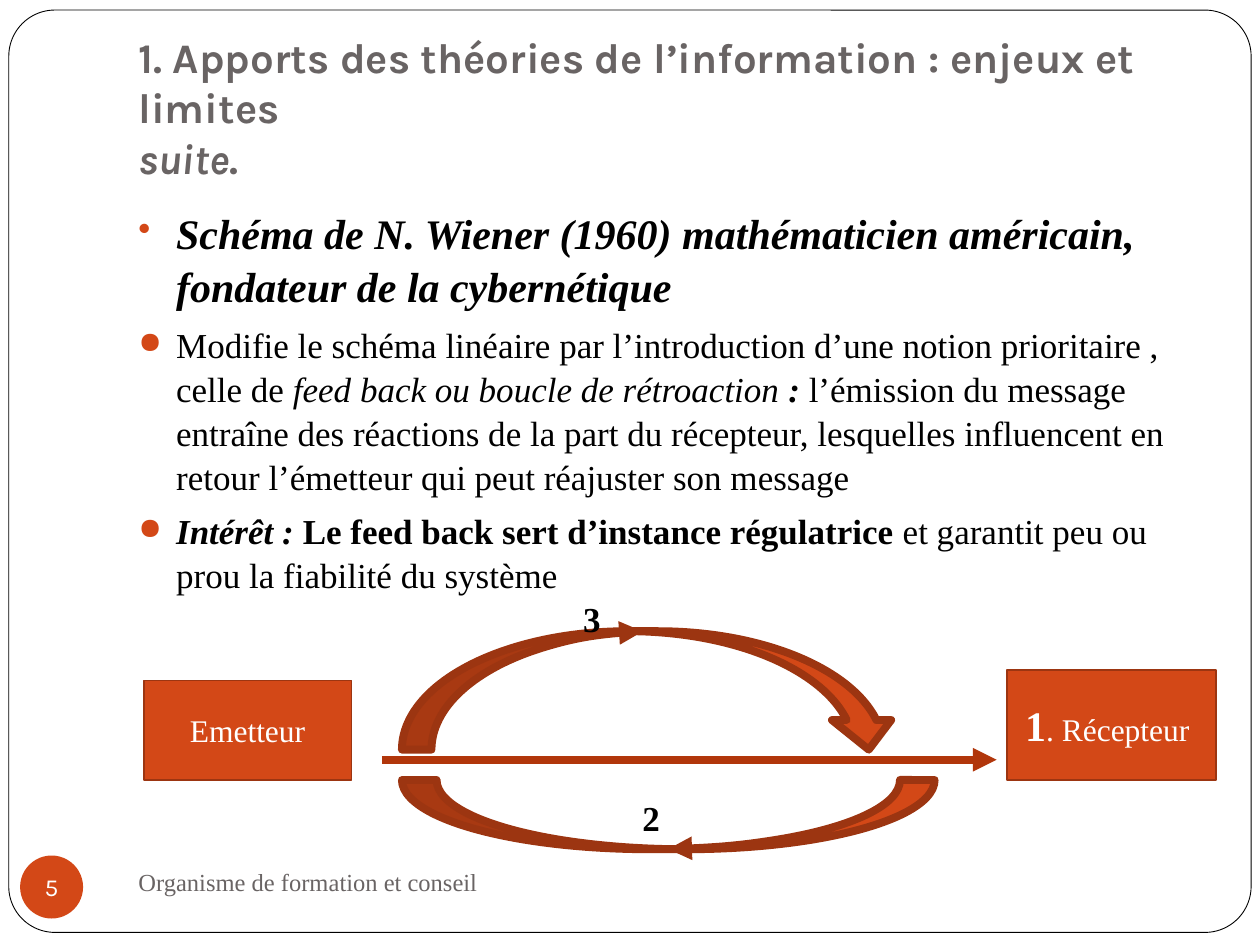
from lxml import etree
from pptx import Presentation
from pptx.dml.color import RGBColor
from pptx.enum.shapes import MSO_CONNECTOR, MSO_SHAPE
from pptx.enum.text import MSO_ANCHOR, PP_ALIGN
from pptx.oxml.ns import qn
from pptx.util import Inches, Pt

TOP, MIDDLE, BOTTOM = MSO_ANCHOR.TOP, MSO_ANCHOR.MIDDLE, MSO_ANCHOR.BOTTOM
LEFT, CENTER = PP_ALIGN.LEFT, PP_ALIGN.CENTER
SERIF, SANS = "Times New Roman", "Karla"
ORANGE, RUST, ARROW, GREY = "D34817", "9C3511", "B1360B", "696464"
BLACK, WHITE = "000000", "FFFFFF"
BOLD, ITALIC = {"bold": True}, {"italic": True}
BOLD_ITALIC = {**BOLD, **ITALIC}

# Content: each paragraph is a list of (text, format) runs
TITLE = [[("1. Apports des théories de l’information : enjeux et limites\v", BOLD),
          ("suite", BOLD_ITALIC), (".", BOLD)]]
BULLETS = ["•", "●", "●"]
BODY = [
    [("Schéma de N. Wiener (1960) mathématicien américain, fondateur de la cybernétique",
      {**BOLD_ITALIC, "size": Pt(24)})],
    [("Modifie le schéma linéaire par l’introduction d’une notion prioritaire , celle de ", {}),
     ("feed back ou boucle de rétroaction ", ITALIC),
     (": ", BOLD_ITALIC),
     ("l’émission du message entraîne des réactions de la part du récepteur, lesquelles "
      "influencent en retour l’émetteur qui peut réajuster son message", {})],
    [("Intérêt : ", BOLD_ITALIC),
     ("Le feed back sert d’instance régulatrice ", BOLD),
     ("et garantit peu ou prou la fiabilité du système", {})],
]
ACTORS = [
    ((1.14, 5.4, 1.65, 0.79), [[("Emetteur", {})]]),
    ((7.99, 5.32, 1.66, 0.87), [[("1", {**BOLD, "size": Pt(24)}), (". Récepteur ", {})]]),
]
LOOPS = [
    (MSO_SHAPE.CURVED_UP_ARROW, (3.19, 6.19, 4.09, 0.55), (0.5, 0, 0)),
    (MSO_SHAPE.CURVED_DOWN_ARROW, (3.19, 5.01, 3.94, 0.94), ()),
]
STEPS = [("2", (5, 6.27, 1.16, 0.44)), ("3", (4.53, 4.69, 1.18, 0.44))]
FOOTER = [[("Organisme de formation et conseil", {})]]


def rgb(value):
    return RGBColor.from_string(value)


def write(shape, paragraphs, size, color, font=SERIF, align=LEFT, anchor=TOP,
          margins=(0.1, 0.05, 0.1, 0.05), wrap=True):
    frame = shape.text_frame
    frame.word_wrap, frame.vertical_anchor = wrap, anchor
    for side, margin in zip(("left", "top", "right", "bottom"), margins):
        setattr(frame, f"margin_{side}", Inches(margin))
    for index, runs in enumerate(paragraphs):
        paragraph = frame.add_paragraph() if index else frame.paragraphs[0]
        paragraph.alignment = align
        for text, changes in runs:
            # A vertical tab stands for a line break after the run
            run = paragraph.add_run()
            run.text = text.rstrip("\v")
            formats = {"name": font, "size": Pt(size), "bold": False, "italic": False, **changes}
            for name, value in formats.items():
                setattr(run.font, name, value)
            run.font.color.rgb = rgb(color)
            if text.endswith("\v"):
                paragraph.add_line_break()
    return frame


def add_text(box, paragraphs, size, color, **options):
    shape = slide.shapes.add_textbox(*map(Inches, box))
    return write(shape, paragraphs, size, color, **options)


def add_figure(kind, box, fill, line=None, width=1):
    shape = slide.shapes.add_shape(kind, *map(Inches, box))
    shape.shadow.inherit = False
    shape.fill.solid()
    shape.fill.fore_color.rgb = rgb(fill)
    if line:
        shape.line.color.rgb = rgb(line)
        shape.line.width = Pt(width)
    else:
        shape.line.fill.background()
    return shape


def add_arrowhead(shape, end):
    line = shape.line._get_or_add_ln()
    etree.SubElement(line, qn("a:round"))
    etree.SubElement(line, qn(f"a:{end}"), type="triangle")


def add_bullet(paragraph, character):
    properties = paragraph._p.get_or_add_pPr()
    properties.set("marL", str(Inches(0.3)))
    properties.set("indent", str(-Inches(0.3)))
    color = etree.SubElement(properties, qn("a:buClr"))
    etree.SubElement(color, qn("a:srgbClr"), val=ORANGE)
    etree.SubElement(properties, qn("a:buSzPct"), val="85000")
    etree.SubElement(properties, qn("a:buChar"), char=character)


presentation = Presentation()
presentation.slide_width, presentation.slide_height = Inches(10), Inches(7.5)
slide = presentation.slides.add_slide(presentation.slide_layouts[6])

# Rounded page frame
page = add_figure(MSO_SHAPE.ROUNDED_RECTANGLE, (0.07, 0.08, 9.86, 7.32), WHITE, BLACK, 0.5)
page.adjustments[0] = 0.05

# Title and bulleted body
add_text((1, 0.3, 8.5, 1.25), TITLE, 24, GREY, font=SANS, anchor=BOTTOM,
         margins=(0.1, 0.05, 0.1, 0.1))
body = add_text((1, 1.58, 8.5, 5), BODY, 20, BLACK)
for paragraph, character in zip(body.paragraphs, BULLETS):
    paragraph.line_spacing = 1.05
    paragraph.space_before = Pt(5.8)
    add_bullet(paragraph, character)

# Sender and receiver
for box, label in ACTORS:
    actor = add_figure(MSO_SHAPE.RECTANGLE, box, ORANGE, RUST)
    write(actor, label, 18, WHITE, align=CENTER, anchor=MIDDLE)

# Message arrow
message = slide.shapes.add_connector(MSO_CONNECTOR.STRAIGHT, Inches(3.03), Inches(6.03),
                                     Inches(7.91), Inches(6.03))
message.line.color.rgb = rgb(ARROW)
message.line.width = Pt(4.5)
add_arrowhead(message, "tailEnd")
etree.SubElement(message._element.spPr, qn("a:effectLst"))

# Feedback loops and their numbers
for kind, box, adjustments in LOOPS:
    loop = add_figure(kind, box, ORANGE, RUST, 4.5)
    for index, value in enumerate(adjustments):
        loop.adjustments[index] = value
    add_arrowhead(loop, "headEnd")
for number, box in STEPS:
    add_text(box, [[(number, BOLD)]], 20, BLACK)

# Page number and footer
badge = add_figure(MSO_SHAPE.OVAL, (0.16, 6.79, 0.5, 0.5), ORANGE)
write(badge, [[("5", {})]], 14, WHITE, font=SANS, align=CENTER, anchor=MIDDLE,
      margins=(0, 0, 0, 0), wrap=False)
add_text((1, 6.75, 4.33, 0.5), FOOTER, 14, GREY, anchor=MIDDLE)

presentation.save("out.pptx")
